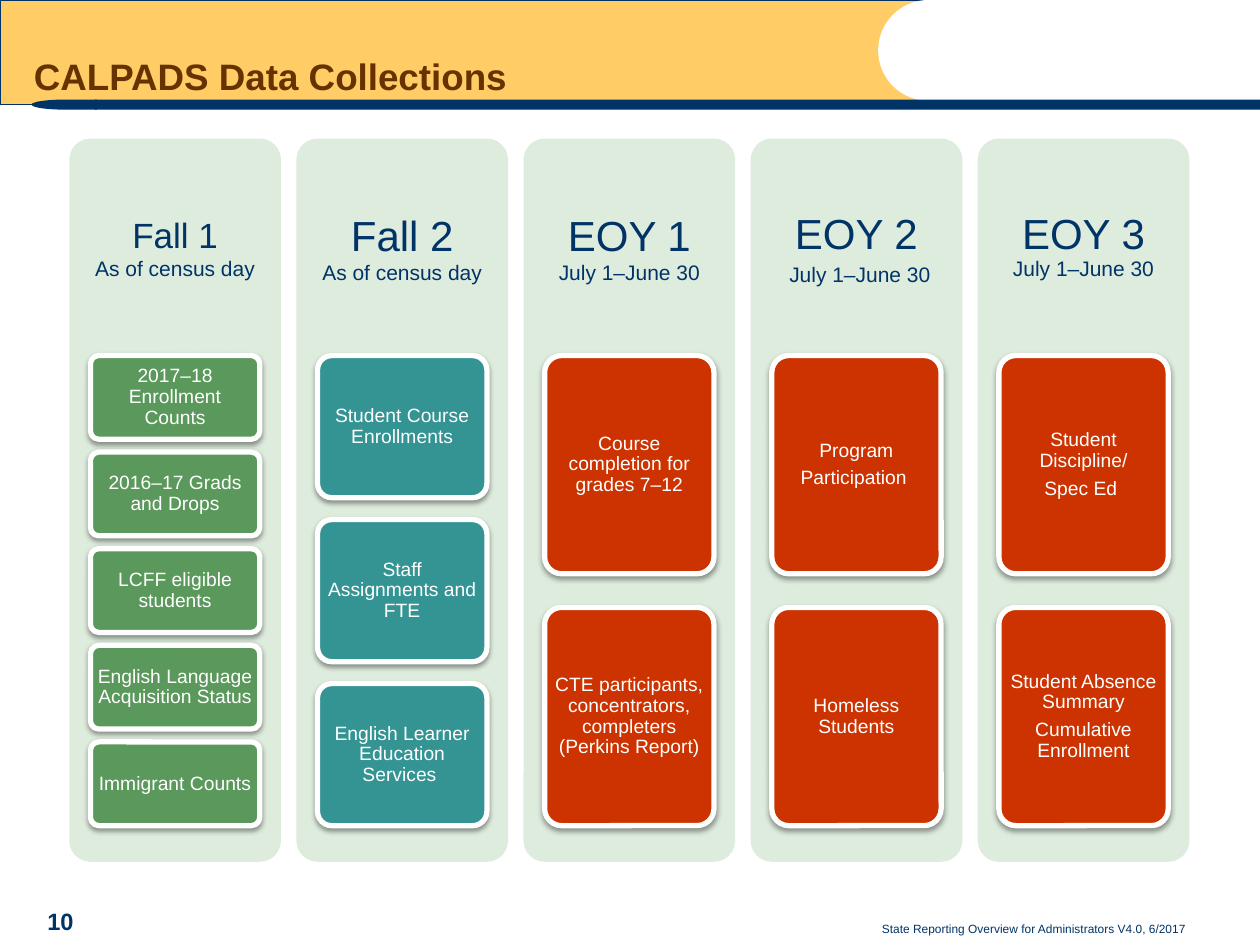
from lxml.etree import SubElement
from pptx import Presentation
from pptx.dml.color import RGBColor
from pptx.enum.shapes import MSO_SHAPE
from pptx.enum.text import MSO_ANCHOR, PP_ALIGN
from pptx.oxml.ns import qn
from pptx.util import Inches, Pt

COLORS = {
    "gold": "FFCC66", "navy": "003366", "brown": "663300", "white": "FFFFFF",
    "panel": "DEECDE", "green": "5B985B", "teal": "349393", "red": "CC3300",
    "shadow": "000000",
}
FONT = "Arial"
TITLE = "CALPADS Data Collections"
FOOTER = "State Reporting Overview for Administrators V4.0, 6/2017"
NUMBER = "10"
COLLECTIONS = [
    {"name": "Fall 1", "size": 20, "period": [("As of census day", 12)],
     "inset": 0.08, "color": "green", "cards": [
        ["2017–18 Enrollment Counts"], ["2016–17 Grads and Drops"],
        ["LCFF eligible students"], ["English Language Acquisition Status"],
        ["Immigrant Counts "]]},
    {"name": "Fall 2", "period": [("As of census day", 12)],
     "color": "teal", "cards": [
        ["Student Course Enrollments"], ["Staff Assignments and FTE"],
        ["English Learner Education Services "]]},
    {"name": "EOY 1", "period": [("July 1–June 30", 12)],
     "color": "red", "cards": [
        ["Course completion for grades 7–12"],
        ["CTE participants, concentrators, completers (Perkins Report)"]]},
    {"name": "EOY 2", "period": [(" ", 14), ("July 1–June 30", 12)],
     "color": "red", "cards": [
        ["Program", "Participation "], ["Homeless Students"]]},
    {"name": "EOY 3", "period": [("July 1–June 30", 12)],
     "spacing": 0.9, "after": 6, "color": "red", "cards": [
        ["Student Discipline/", "Spec Ed "],
        ["Student Absence Summary", "Cumulative Enrollment"]]},
]
PANEL_LEFT, PANEL_TOP, PANEL_WIDTH, PANEL_HEIGHT = 0.55, 1.1, 1.68, 5.74
PANEL_PITCH = 1.8025
HEADER_HEIGHT = PANEL_HEIGHT * 0.3
CARDS_HEIGHT = PANEL_HEIGHT * 0.65
CARD_WIDTH = PANEL_WIDTH * 0.8
GAP_RATIO = 2 / 13
CORNER = 0.1


def add_block(slide, kind, box, fill, line=None, width=0, corner=None):
    shape = slide.shapes.add_shape(kind, *map(Inches, box))
    shape.shadow.inherit = False
    shape.fill.solid()
    shape.fill.fore_color.rgb = RGBColor.from_string(COLORS[fill])
    if line:
        shape.line.color.rgb = RGBColor.from_string(COLORS[line])
        shape.line.width = Pt(width)
    else:
        shape.line.fill.background()
    if corner is not None:
        shape.adjustments[0] = corner
    return shape


def add_shadow(shape):
    effects = shape.element.spPr.find(qn("a:effectLst"))
    shadow = SubElement(effects, qn("a:outerShdw"), blurRad=str(Pt(3.1)),
                        dist=str(Pt(1.6)), dir="5400000", rotWithShape="0")
    color = SubElement(shadow, qn("a:srgbClr"), val=COLORS["shadow"])
    SubElement(color, qn("a:alpha"), val="38000")


def write(shape, paragraphs, color, anchor, align, insets=(0.1, 0.05),
          spacing=None, after=None, bold=False):
    frame = shape.text_frame
    frame.word_wrap = True
    frame.vertical_anchor = anchor
    frame.margin_left = frame.margin_right = Inches(insets[0])
    frame.margin_top = frame.margin_bottom = Inches(insets[1])
    for index, runs in enumerate(paragraphs):
        paragraph = frame.add_paragraph() if index else frame.paragraphs[0]
        paragraph.alignment = align
        paragraph.line_spacing = spacing
        if after:
            paragraph.space_after = Pt(after)
        for text, size in runs:
            run = paragraph.add_run()
            run.text = text
            run.font.name = FONT
            run.font.size = Pt(size)
            run.font.bold = bold
            run.font.color.rgb = RGBColor.from_string(COLORS[color])


def add_text(slide, box, *args, **options):
    write(slide.shapes.add_textbox(*map(Inches, box)), *args, **options)


def add_banner(slide):
    add_block(slide, MSO_SHAPE.RECTANGLE, (0, 0, 7.33, 0.83), "gold", "navy", 0.75)
    add_block(slide, MSO_SHAPE.OVAL, (6.97, 0, 0.8, 0.8), "white")
    add_block(slide, MSO_SHAPE.ROUNDED_RECTANGLE, (0.75, 0.79, 9.25, 0.08),
              "navy", corner=0)
    tip = add_block(slide, MSO_SHAPE.FLOWCHART_DELAY, (0.25, 0.79, 0.52, 0.08), "navy")
    tip.element.spPr.xfrm.set("flipH", "1")
    add_text(slide, (0.17, 0, 6.75, 0.83), [[(TITLE, 21)]], "brown",
             MSO_ANCHOR.BOTTOM, PP_ALIGN.LEFT, spacing=0.9, bold=True)


def add_collection(slide, left, collection):
    add_block(slide, MSO_SHAPE.ROUNDED_RECTANGLE,
              (left, PANEL_TOP, PANEL_WIDTH, PANEL_HEIGHT), "panel", corner=CORNER)
    inset = collection.get("inset", 0.1)
    header = [[(collection["name"], collection.get("size", 24))], collection["period"]]
    add_text(slide, (left, PANEL_TOP, PANEL_WIDTH, HEADER_HEIGHT), header, "navy",
             MSO_ANCHOR.MIDDLE, PP_ALIGN.CENTER, (inset, inset),
             spacing=collection.get("spacing"))
    if "after" in collection:
        slide.shapes[-1].text_frame.paragraphs[-1].space_after = Pt(collection["after"])
    cards = collection["cards"]
    height = CARDS_HEIGHT / (len(cards) + (len(cards) - 1) * GAP_RATIO)
    for row, lines in enumerate(cards):
        top = PANEL_TOP + HEADER_HEIGHT + row * height * (1 + GAP_RATIO)
        card = add_block(slide, MSO_SHAPE.ROUNDED_RECTANGLE,
                         (left + (PANEL_WIDTH - CARD_WIDTH) / 2, top, CARD_WIDTH, height),
                         collection["color"], "white", 3, CORNER)
        add_shadow(card)
        write(card, [[(line, 11)] for line in lines], "white", MSO_ANCHOR.MIDDLE,
              PP_ALIGN.CENTER, (0.03, 0.02), spacing=0.9, after=4)


def main():
    presentation = Presentation()
    presentation.slide_width, presentation.slide_height = Inches(10), Inches(7.5)
    slide = presentation.slides.add_slide(presentation.slide_layouts[6])
    add_banner(slide)
    for column, collection in enumerate(COLLECTIONS):
        add_collection(slide, PANEL_LEFT + column * PANEL_PITCH, collection)
    add_text(slide, (4.17, 7.21, 5.34, 0.27), [[(FOOTER, 6.8)]], "navy",
             MSO_ANCHOR.BOTTOM, PP_ALIGN.RIGHT)
    add_text(slide, (0.16, 7.1, 0.64, 0.37), [[(NUMBER, 13.5)]], "navy",
             MSO_ANCHOR.BOTTOM, PP_ALIGN.CENTER, bold=True)
    presentation.save("out.pptx")


if __name__ == "__main__":
    main()
